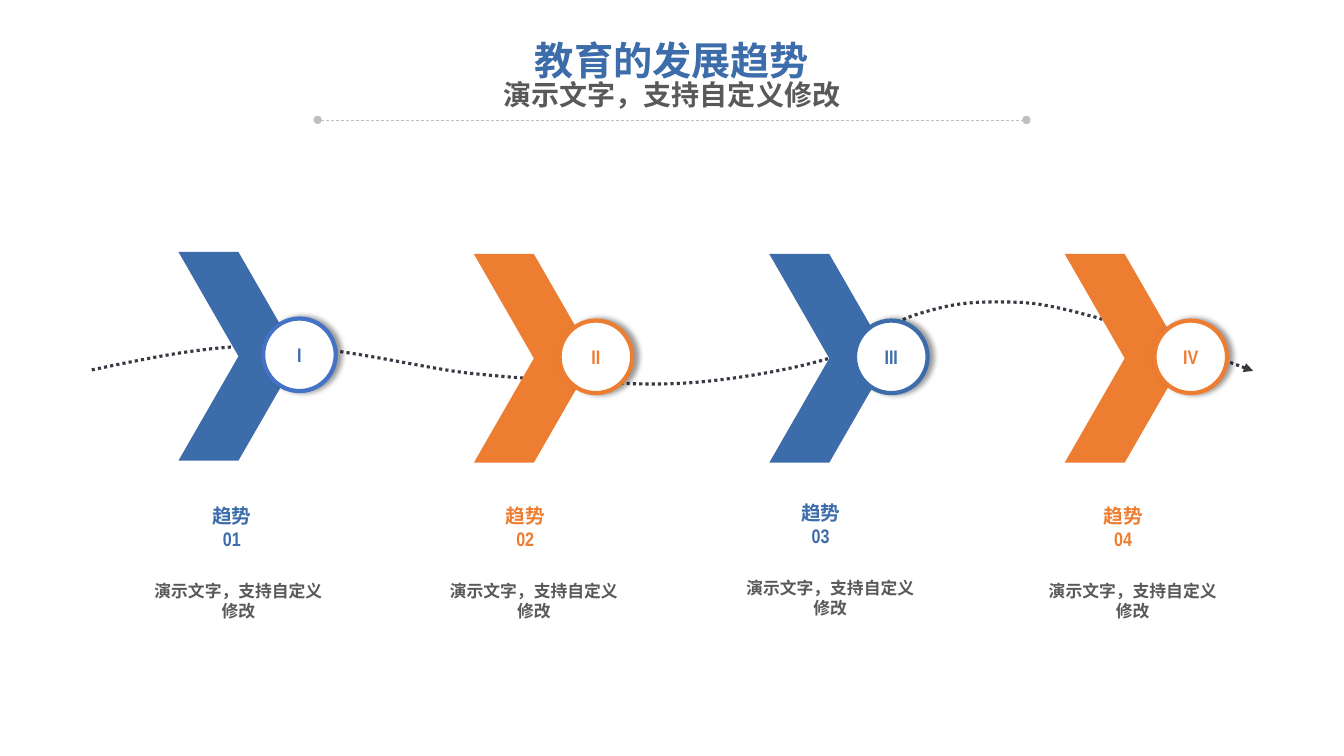
import dataclasses

import pptx
import pptx.dml.color
import pptx.enum.dml
import pptx.enum.shapes
import pptx.enum.text
import pptx.oxml
import pptx.oxml.ns
import pptx.util

Inches, Pt = pptx.util.Inches, pptx.util.Pt
SHAPE = pptx.enum.shapes.MSO_SHAPE
DASH = pptx.enum.dml.MSO_LINE


@dataclasses.dataclass(frozen=True)
class Theme:
    blue: str = "3D6CAA"
    ring: str = "4472C4"
    orange: str = "ED7D31"
    gray: str = "595959"
    rule: str = "BFBFBF"
    dark: str = "3D3743"
    white: str = "FFFFFF"
    latin: str = "Arial Narrow"
    asian: str = "Noto Sans CJK SC"
    title: int = 28
    sub: int = 20
    label: int = 14
    note: int = 12


@dataclasses.dataclass(frozen=True)
class Step:
    roman: str
    label: str
    color: str
    ring: str
    top: float = 2.52     # top of the chevron
    badge: float = 0.85   # left of the circle in its column
    text: float = 0.51    # centre of the label in its column
    note: float = -0.26   # left of the note in its column
    base: float = 5.11    # top of the label


THEME = Theme()
WIDE, HIGH = 13.33, 7.5
NOTE = "演示文字，支持自定义修改"
FIRST, PITCH = 1.77, 2.93
STEPS = [
    Step("I", "趋势01", THEME.blue, THEME.ring, top=2.5, badge=0.84, text=0.53),
    Step("II", "趋势02", THEME.orange, THEME.orange),
    Step("III", "趋势03", THEME.blue, THEME.blue, note=-0.25, base=5.08),
    Step("IV", "趋势04", THEME.orange, THEME.orange, badge=0.89, text=0.58, note=-0.18),
]
# Start point, then two control points and an end point per cubic curve
START = (0.91, 3.67)
CURVES = [
    ((1.49, 3.55), (2.08, 3.42), (2.7, 3.43)),
    ((3.32, 3.43), (4.13, 3.64), (4.63, 3.7)),
    ((5.12, 3.75), (5.29, 3.76), (5.68, 3.78)),
    ((6.07, 3.8), (6.52, 3.83), (6.94, 3.79)),
    ((7.37, 3.75), (7.88, 3.66), (8.24, 3.55)),
    ((8.6, 3.44), (8.8, 3.2), (9.12, 3.11)),
    ((9.43, 3.02), (9.59, 2.98), (10.13, 3)),
    ((10.67, 3.02), (11.94, 3.5), (12.43, 3.68)),
]


def rgb(color):
    return pptx.dml.color.RGBColor.from_string(color)


def node(parent, tag, **attrs):
    child = pptx.oxml.parse_xml(f"<{tag} {pptx.oxml.ns.nsdecls('a')}/>")
    for name, value in attrs.items():
        child.set(name, str(value))
    parent.append(child)
    return child


def write(shape, text, size, color, font=THEME.latin, wrap=True):
    frame = shape.text_frame
    frame.word_wrap = wrap
    frame.vertical_anchor = pptx.enum.text.MSO_ANCHOR.MIDDLE
    frame.margin_left = frame.margin_right = 0
    frame.margin_top = frame.margin_bottom = 0
    para = frame.paragraphs[0]
    para.alignment = pptx.enum.text.PP_ALIGN.CENTER
    run = para.add_run()
    run.text = text
    run.font.size, run.font.bold = Pt(size), True
    run.font.name = font
    run.font.color.rgb = rgb(color)
    node(run.font._element, "a:ea", typeface=THEME.asian)


def add_text(slide, box, text, size, color, **kind):
    shape = slide.shapes.add_textbox(*map(Inches, box))
    write(shape, text, size, color, **kind)


def draw_line(shape, color, width, dash, **ends):
    shape.line.color.rgb = rgb(color)
    shape.line.width = Pt(width)
    shape.line.dash_style = dash
    for end, kind in ends.items():
        node(shape.line._get_or_add_ln(), f"a:{end}", type=kind)


def add_shape(slide, kind, box, fill, ring=None):
    shape = slide.shapes.add_shape(kind, *map(Inches, box))
    shape.shadow.inherit = False
    shape.fill.solid()
    shape.fill.fore_color.rgb = rgb(fill)
    if ring:
        shape.line.color.rgb = rgb(ring)
        shape.line.width = Pt(3)
    else:
        shape.line.fill.background()
    return shape


def cast_shade(shape):
    effects = shape._element.spPr.find(pptx.oxml.ns.qn("a:effectLst"))
    shade = node(effects, "a:outerShdw", blurRad=Pt(4), dist=Pt(3), dir=0,
                 algn="l", rotWithShape=0)
    node(node(shade, "a:srgbClr", val="000000"), "a:alpha", val=40000)


def add_head(slide, left, top, width):
    title = slide.shapes.title
    title.left, title.top = Inches(left), Inches(top)
    title.width, title.height = Inches(width), Inches(0.57)
    write(title, "教育的发展趋势", THEME.title, THEME.blue, wrap=False)
    y = Inches(top + 0.88)
    rule = slide.shapes.add_connector(
        pptx.enum.shapes.MSO_CONNECTOR.STRAIGHT,
        Inches(left), y, Inches(left + width), y)
    draw_line(rule, THEME.rule, 0.5, DASH.DASH, headEnd="oval", tailEnd="oval")
    node(rule._element.spPr, "a:effectLst")
    add_text(slide, (left, top + 0.41, width, 0.44), NOTE, THEME.sub,
             THEME.gray, font=THEME.asian, wrap=False)


def trace(start, curves, count=12):
    """Return points along a chain of cubic curves, in EMU."""
    points = []
    for one, two, end in curves:
        for i in range(1, count + 1):
            t = i / count
            u = 1 - t
            points.append(tuple(
                Inches(u**3 * a + 3 * u * u * t * b + 3 * u * t * t * c + t**3 * d)
                for a, b, c, d in zip(start, one, two, end)))
        start = end
    return points


def add_wave(slide):
    maker = slide.shapes.build_freeform(*map(Inches, START))
    maker.add_line_segments(trace(START, CURVES), close=False)
    wave = maker.convert_to_shape()
    wave.shadow.inherit = False
    wave.fill.background()
    draw_line(wave, THEME.dark, 2.25, DASH.ROUND_DOT, tailEnd="triangle")


def add_step(slide, left, step):
    add_shape(slide, SHAPE.CHEVRON, (left, step.top, 1.19, 2.07), step.color)
    badge = add_shape(slide, SHAPE.OVAL,
                      (left + step.badge, step.top + 0.66, 0.72, 0.72),
                      THEME.white, step.ring)
    cast_shade(badge)
    write(badge, step.roman, THEME.label, step.color)
    # The narrow box sets the number below the word
    add_text(slide, (left + step.text - 0.25, step.base, 0.5, 0.24),
             step.label, THEME.label, step.color)
    add_text(slide, (left + step.note, step.base + 0.65, 1.71, 0.4),
             NOTE, THEME.note, THEME.gray)


def main():
    deck = pptx.Presentation()
    deck.slide_width, deck.slide_height = Inches(WIDE), Inches(HIGH)
    slide = deck.slides.add_slide(deck.slide_layouts[5])
    add_wave(slide)
    for i, step in enumerate(STEPS):
        add_step(slide, FIRST + i * PITCH, step)
    add_head(slide, 3.15, 0.31, 7.03)
    deck.save("out.pptx")


if __name__ == "__main__":
    main()
